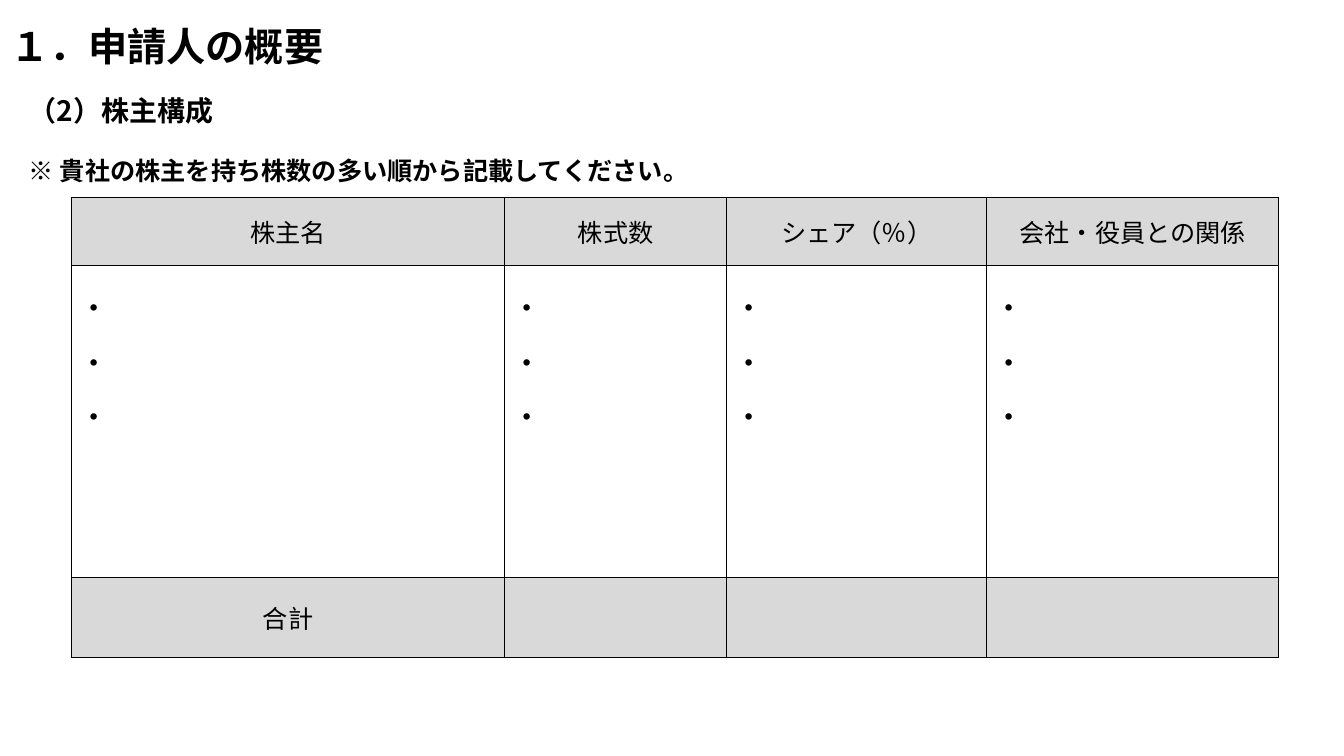
from lxml.etree import SubElement
from pptx import Presentation
from pptx.dml.color import RGBColor
from pptx.enum.text import MSO_ANCHOR as Anchor, MSO_AUTO_SIZE as AutoSize, PP_ALIGN as Align
from pptx.oxml.ns import qn
from pptx.util import Cm, Pt

FONT = "Noto Sans CJK JP"
BLACK, GREY, WHITE = "000000", "D9D9D9", "FFFFFF"
HEADERS = ["株主名", "株式数", "シェア（％）", "会社・役員との関係"]
COL_WIDTHS = [10.92, 5.59, 6.56, 7.35]
ROW_HEIGHTS = [1.7, 7.87, 2.01]


def color(hex_value):
    return RGBColor.from_string(hex_value)


def apply(target, formats):
    for name, value in formats.items():
        setattr(target, name, value)


def write(tf, lines, size, bold=False, **formats):
    """Write each line as a paragraph with the same text format."""
    for i, line in enumerate(lines):
        p = tf.paragraphs[0] if i == 0 else tf.add_paragraph()
        apply(p, formats)
        r = p.add_run()
        r.text = line
        apply(r.font, {"name": FONT, "size": Pt(size), "bold": bold})
        r.font.color.rgb = color(BLACK)
        SubElement(r.font._element, qn("a:ea"), typeface=FONT)


def set_borders(cell):
    tc_pr = cell._tc.get_or_add_tcPr()
    for i, side in enumerate(("lnL", "lnR", "lnT", "lnB")):
        ln = tc_pr.makeelement(qn(f"a:{side}"), {"w": str(Pt(1))})
        SubElement(SubElement(ln, qn("a:solidFill")), qn("a:srgbClr"), val=BLACK)
        tc_pr.insert(i, ln)


def fill_cell(cell, lines, fill, anchor, **formats):
    cell.fill.solid()
    cell.fill.fore_color.rgb = color(fill)
    cell.vertical_anchor = anchor
    set_borders(cell)
    write(cell.text_frame, lines, 18, **formats)


def add_title(s, text):
    title = s.shapes.title
    apply(title, {"left": Cm(0), "top": Cm(-0.03), "width": Cm(29.21), "height": Cm(2.51)})
    apply(title.text_frame, {"vertical_anchor": Anchor.MIDDLE, "word_wrap": True,
                             "auto_size": AutoSize.NONE})
    write(title.text_frame, [text], 28, bold=True, alignment=Align.LEFT, line_spacing=0.9)


def add_shareholder_table(s):
    table = s.shapes.add_table(len(ROW_HEIGHTS), len(COL_WIDTHS), Cm(1.8), Cm(4.98),
                               Cm(sum(COL_WIDTHS)), Cm(sum(ROW_HEIGHTS))).table
    for column, width in zip(table.columns, COL_WIDTHS):
        column.width = Cm(width)
    for row, height in zip(table.rows, ROW_HEIGHTS):
        row.height = Cm(height)

    totals = ["合計"] + [""] * (len(HEADERS) - 1)
    for c, (header, total) in enumerate(zip(HEADERS, totals)):
        fill_cell(table.cell(0, c), [header], GREY, Anchor.MIDDLE, alignment=Align.CENTER)
        fill_cell(table.cell(1, c), ["・"] * 3, WHITE, Anchor.TOP, bold=True, line_spacing=1.5)
        fill_cell(table.cell(2, c), [total] if total else [], GREY, Anchor.MIDDLE,
                  alignment=Align.CENTER)


def add_intro(s):
    tf = s.shapes.add_textbox(Cm(0.48), Cm(2.24), Cm(29.21), Cm(2.82)).text_frame
    tf.word_wrap = True
    write(tf, ["（2）株主構成"], 20, bold=True)
    note = tf.add_paragraph()
    note.space_before = Pt(20)
    r = note.add_run()
    r.text = "※ 貴社の株主を持ち株数の多い順から記載してください。"
    apply(r.font, {"name": FONT, "size": Pt(18), "bold": True})
    r.font.color.rgb = color(BLACK)
    SubElement(r.font._element, qn("a:ea"), typeface=FONT)


def main():
    prs = Presentation()
    apply(prs, {"slide_width": Cm(33.87), "slide_height": Cm(19.05)})
    s = prs.slides.add_slide(prs.slide_layouts[5])

    # Shareholder table
    add_shareholder_table(s)
    # Section heading and instruction
    add_intro(s)
    # Slide title
    add_title(s, "１．申請人の概要")

    prs.save("out.pptx")


if __name__ == "__main__":
    main()
